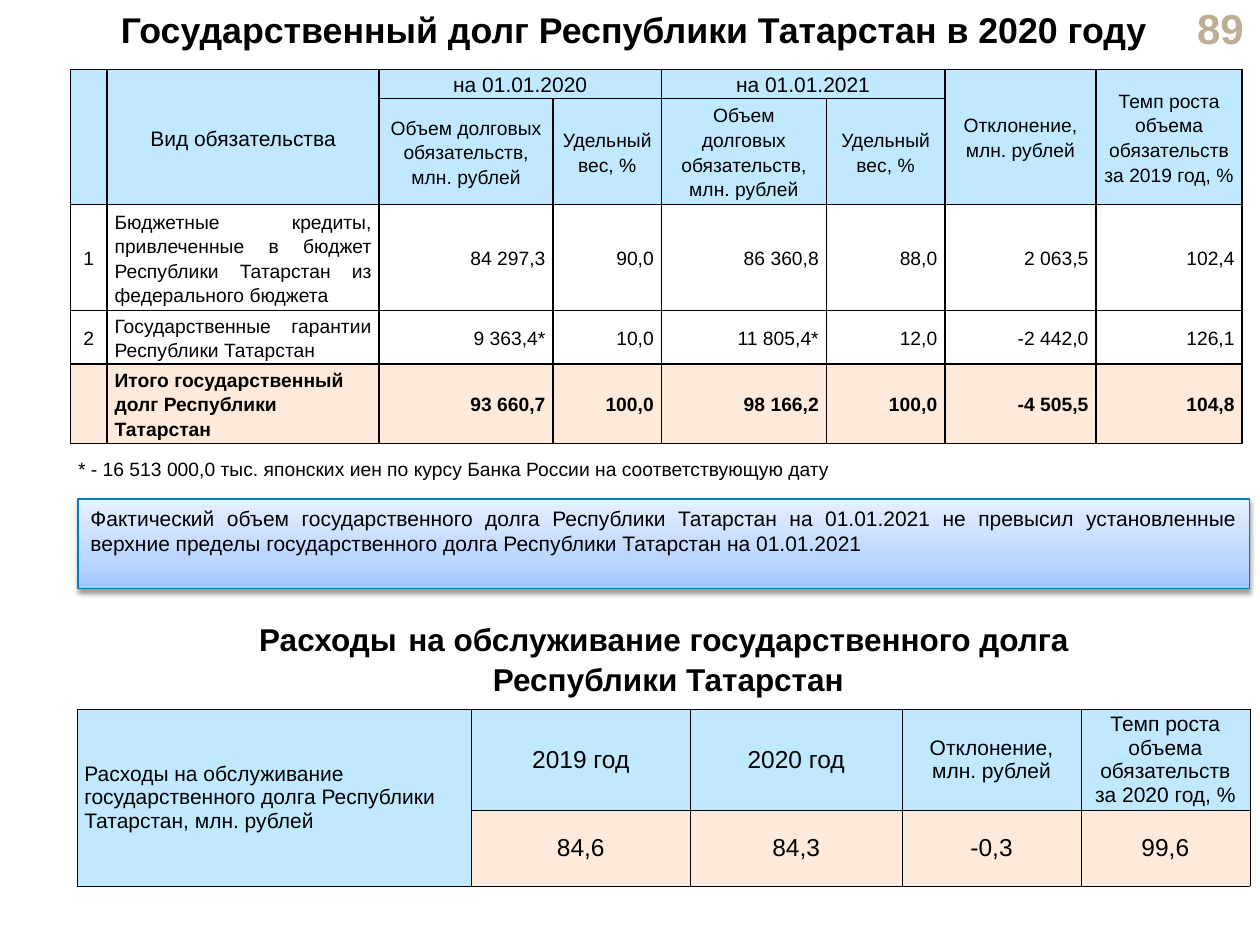
from dataclasses import dataclass, field
from typing import Any

from lxml import etree
from pptx import Presentation
from pptx import util as u
from pptx.dml.color import RGBColor
from pptx.enum import shapes, text
from pptx.oxml import parse_xml
from pptx.oxml.ns import nsdecls, qn

COLORS = {
    "text": "000000",
    "number": "BFAE96",
    "header": "C0E9FF",
    "total": "FDEADA",
    "outline": "007EC1",
    "shade_low": "A2C8FF",
    "shade_mid": "BDD7FF",
    "shade_high": "E6F0FF",
}
LEFT, CENTER, RIGHT, JUSTIFY = (
    text.PP_ALIGN.LEFT, text.PP_ALIGN.CENTER, text.PP_ALIGN.RIGHT, text.PP_ALIGN.JUSTIFY)
MIDDLE = text.MSO_ANCHOR.MIDDLE
THIN, THICK = 0.25, 1
VOLUME = "Объем долговых обязательств, млн. рублей"
SHARE = "Удельный вес, %"
DEVIATION = "Отклонение, млн. рублей"
GROWTH = "Темп роста объема обязательств за {} год, %"


@dataclass(frozen=True)
class Style:
    size: float
    align: Any = LEFT
    bold: bool = False
    color: str = "text"
    spacing: float = 1.0


@dataclass(frozen=True)
class Area:
    left: float
    top: float
    width: float
    height: float

    def lengths(self) -> list:
        return [u.Inches(n) for n in (self.left, self.top, self.width, self.height)]


@dataclass(frozen=True)
class Entry:
    """A table cell: its words, place, span and look."""
    row: int
    column: int
    words: str
    style: Style
    fill: str = ""
    rows: int = 1
    columns: int = 1
    edges: dict = field(default_factory=dict)


def set_format(target: Any, values: dict) -> None:
    for name, value in values.items():
        setattr(target, name, value)


def style_font(font: Any, style: Style) -> None:
    set_format(font, {"name": "Arial", "size": u.Pt(style.size), "bold": style.bold})
    font.color.rgb = RGBColor.from_string(COLORS[style.color])


def write(frame: Any, words: str, style: Style) -> Any:
    frame.word_wrap = True
    para = frame.paragraphs[0]
    set_format(para, {"alignment": style.align, "line_spacing": style.spacing})
    span = para.add_run()
    span.text = words
    style_font(span.font, style)
    return para


def add_text(page: Any, area: Area, words: str, style: Style) -> Any:
    box = page.shapes.add_textbox(*area.lengths())
    write(box.text_frame, words, style)
    return box


def draw_edges(cell: Any, edges: dict) -> None:
    """Set the cell borders; a width of zero hides the border."""
    properties = cell._tc.get_or_add_tcPr()
    for side in "LRTB":
        line = etree.SubElement(properties, qn(f"a:ln{side}"), w=str(u.Pt(edges[side])))
        if edges[side]:
            paint = etree.SubElement(line, qn("a:solidFill"))
            etree.SubElement(paint, qn("a:srgbClr"), val=COLORS["text"])
        else:
            etree.SubElement(line, qn("a:noFill"))


def add_grid(page: Any, area: Area, widths: list, heights: list,
             entries: list, line: float) -> None:
    table = page.shapes.add_table(len(heights), len(widths), *area.lengths()).table
    set_format(table, {"first_row": False, "horz_banding": False})
    for column, width in zip(table.columns, widths):
        column.width = u.Inches(width)
    for row, height in zip(table.rows, heights):
        row.height = u.Inches(height)
    for entry in entries:
        last_row, last_column = entry.row + entry.rows, entry.column + entry.columns
        cell = table.cell(entry.row, entry.column)
        if entry.rows * entry.columns > 1:
            cell.merge(table.cell(last_row - 1, last_column - 1))
        for r in range(entry.row, last_row):
            for c in range(entry.column, last_column):
                part = table.cell(r, c)
                draw_edges(part, dict.fromkeys("LRTB", line) | entry.edges)
                if entry.fill:
                    part.fill.solid()
                    part.fill.fore_color.rgb = RGBColor.from_string(COLORS[entry.fill])
                else:
                    part.fill.background()
        set_format(cell, {
            "vertical_anchor": MIDDLE,
            "margin_left": u.Inches(0.06), "margin_right": u.Inches(0.06),
            "margin_top": 0, "margin_bottom": 0})
        if entry.words:
            write(cell.text_frame, entry.words, entry.style)


def debt_entries() -> list:
    large = Style(12, CENTER, spacing=1.15)
    label = Style(11, CENTER, spacing=1.15)
    entries = [
        Entry(0, 0, "", label, "header", rows=2),
        Entry(0, 1, "Вид обязательства", large, "header", rows=2),
        Entry(0, 2, "на 01.01.2020", large, "header", columns=2, edges={"T": THIN, "R": THIN}),
        Entry(0, 4, "на 01.01.2021", large, "header", columns=2, edges={"T": THIN, "L": THIN}),
        Entry(0, 6, DEVIATION, label, "header", rows=2),
        Entry(0, 7, GROWTH.format(2019), label, "header", rows=2),
    ]
    entries += [Entry(1, c, words, label, "header")
                for c, words in enumerate([VOLUME, SHARE] * 2, 2)]
    records = [
        ["1", "Бюджетные кредиты, привлеченные в бюджет Республики Татарстан из "
              "федерального бюджета", "84 297,3", "90,0", "86 360,8", "88,0", "2 063,5", "102,4"],
        ["2", "Государственные гарантии Республики Татарстан",
         "9 363,4*", "10,0", "11 805,4*", "12,0", "-2 442,0", "126,1"],
        ["", "Итого государственный долг Республики Татарстан",
         "93 660,7", "100,0", "98 166,2", "100,0", "-4 505,5", "104,8"],
    ]
    for r, record in enumerate(records, 2):
        total = not record[0]
        aligns = [CENTER, LEFT if total else JUSTIFY] + [RIGHT] * 6
        entries += [Entry(r, c, words, Style(11, align, total, spacing=1.15),
                          "total" if total else "")
                    for c, (words, align) in enumerate(zip(record, aligns))]
    note = "* - 16 513 000,0 тыс. японских иен по курсу Банка России на соответствующую дату"
    entries.append(Entry(5, 0, note, Style(11, spacing=1.15), columns=8,
                         edges={"L": 0, "R": 0, "B": 0}))
    return entries


def service_entries() -> list:
    small, large = Style(12, CENTER), Style(14, CENTER)
    entries = [Entry(0, 0, "Расходы на обслуживание государственного долга Республики "
                           "Татарстан, млн. рублей", Style(12), "header", rows=2)]
    columns = [("2019 год", large, "84,6"), ("2020 год", large, "84,3"),
               (DEVIATION, small, "-0,3"), (GROWTH.format(2020), small, "99,6")]
    for c, (heading, style, value) in enumerate(columns, 1):
        entries += [Entry(0, c, heading, style, "header"), Entry(1, c, value, large, "total")]
    return entries


def add_statement(page: Any, area: Area, words: str) -> None:
    """Draw the shaded panel with its soft shadow."""
    panel = page.shapes.add_shape(shapes.MSO_SHAPE.RECTANGLE, *area.lengths())
    panel.line.color.rgb = RGBColor.from_string(COLORS["outline"])
    panel.line.width = u.Pt(0.75)
    stops = "".join(
        f'<a:gs pos="{place * 1000}"><a:srgbClr val="{COLORS[name]}"/></a:gs>'
        for place, name in [(0, "shade_low"), (35, "shade_mid"), (100, "shade_high")])
    properties = panel._element.spPr
    properties.find(qn("a:ln")).addprevious(parse_xml(
        f'<a:gradFill {nsdecls("a")} rotWithShape="1"><a:gsLst>{stops}</a:gsLst>'
        '<a:lin ang="16200000" scaled="0"/></a:gradFill>'))
    properties.append(parse_xml(
        f'<a:effectLst {nsdecls("a")}><a:outerShdw blurRad="{u.Pt(3.1)}" dist="{u.Pt(1.6)}" '
        f'dir="5400000" rotWithShape="0"><a:srgbClr val="{COLORS["text"]}">'
        '<a:alpha val="38000"/></a:srgbClr></a:outerShdw></a:effectLst>'))
    panel.text_frame.vertical_anchor = text.MSO_ANCHOR.TOP
    write(panel.text_frame, words, Style(12, JUSTIFY))


def main() -> None:
    deck = Presentation()
    set_format(deck, {"slide_width": u.Inches(10), "slide_height": u.Inches(7.5)})
    page = deck.slides.add_slide(deck.slide_layouts[6])
    number = add_text(page, Area(9.33, 0.05, 0.64, 0.34), "89", Style(24, RIGHT, True, "number"))
    number.text_frame.vertical_anchor = MIDDLE
    add_text(page, Area(0.56, 0.05, 8.94, 0.63),
             "Государственный долг Республики Татарстан в 2020 году",
             Style(20.4, CENTER, True, spacing=0.9))
    add_grid(page, Area(0.56, 0.55, 9.3, 3.14),
             [0.29, 2.16, 1.38, 0.86, 1.31, 0.94, 1.2, 1.16],
             [0.21, 0.78, 0.78, 0.39, 0.59, 0.39], debt_entries(), THICK)
    add_grid(page, Area(0.61, 5.63, 9.31, 1.3), [3.13, 1.74, 1.68, 1.42, 1.34],
             [0.75, 0.55], service_entries(), THIN)
    add_statement(page, Area(0.62, 3.96, 9.3, 0.71),
                  "Фактический объем государственного долга Республики Татарстан на 01.01.2021 "
                  "не превысил установленные верхние пределы государственного долга "
                  "Республики Татарстан на 01.01.2021")
    heading = Style(18, CENTER, True)
    box = add_text(page, Area(0.69, 4.79, 9.23, 0.81), "Расходы", heading)
    para = box.text_frame.paragraphs[0]
    for words, size in [(" ", 24), ("на обслуживание государственного долга ", 18),
                        ("Республики Татарстан", 18)]:
        if words.startswith("Республики"):
            para.add_line_break()
        span = para.add_run()
        span.text = words
        style_font(span.font, Style(size, bold=True))
    deck.save("out.pptx")


if __name__ == "__main__":
    main()
